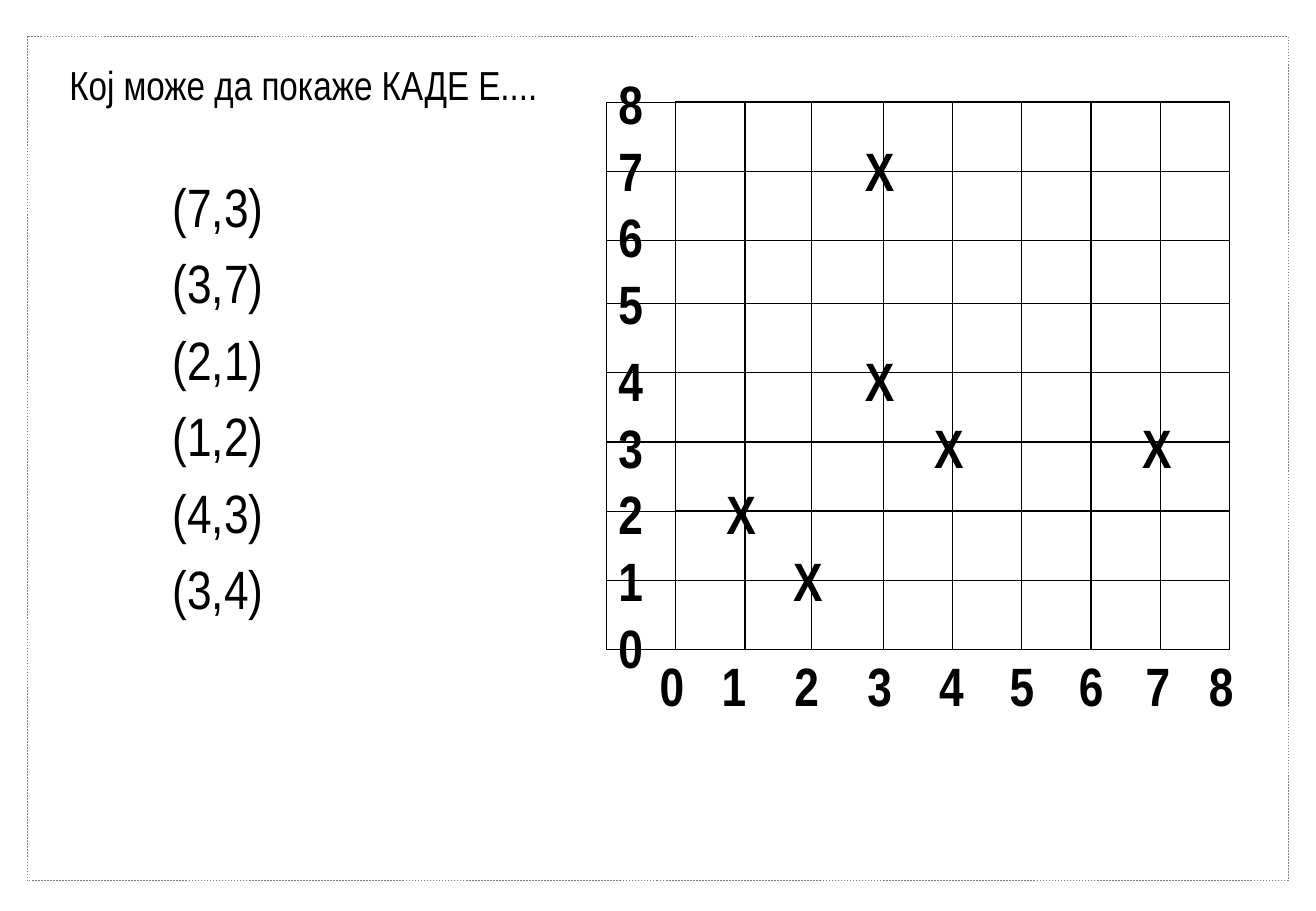
from lxml import etree
from pptx import Presentation
from pptx import util as u
from pptx.dml.color import RGBColor
from pptx.enum import dml, shapes, text
from pptx.oxml import ns

BLACK = RGBColor(0, 0, 0)
GRAY = RGBColor(0x80, 0x80, 0x80)
FONT = "Arial Narrow"

LEFT, TOP = 4.99, 0.84
COLS = [0.57, 0.57, 0.55, 0.59] + [0.57] * 5
ROWS = [0.57, 0.57, 0.52] + [0.57] * 5
TICKS = [5.33, 5.84, 6.44, 7.04, 7.63, 8.21, 8.78, 9.33, 9.85]
POINTS = [(7, 3), (3, 7), (2, 1), (1, 2), (4, 3), (3, 4)]


def place(shape, x, y, w, h):
    shape.left, shape.top = u.Inches(x), u.Inches(y)
    shape.width, shape.height = u.Inches(w), u.Inches(h)


def set_frame(frame):
    frame.word_wrap = True
    frame.auto_size = text.MSO_AUTO_SIZE.NONE
    frame.vertical_anchor = text.MSO_ANCHOR.TOP


def add_run(para, words, size, bold=False):
    para.alignment = text.PP_ALIGN.LEFT
    para.space_before = u.Pt(0)
    run = para.add_run()
    run.text = words
    font = run.font
    font.name, font.size, font.bold = FONT, u.Pt(size), bold
    font.color.rgb = BLACK


def add_label(slide, words, x, y, w=0.6):
    box = slide.shapes.add_textbox(u.Inches(x), u.Inches(y), u.Inches(w), u.Inches(0.63))
    set_frame(box.text_frame)
    add_run(box.text_frame.paragraphs[0], words, 32, True)


def add_border(slide):
    rect = slide.shapes.add_shape(
        shapes.MSO_SHAPE.RECTANGLE,
        u.Inches(0.22), u.Inches(0.3), u.Inches(10.38), u.Inches(6.95))
    rect.shadow.inherit = False
    rect.fill.background()
    rect.line.color.rgb = GRAY
    rect.line.width = u.Pt(0.25)
    rect.line.dash_style = dml.MSO_LINE.DASH


def add_title(slide):
    title = slide.shapes.title
    place(title, 0.47, 0.44, 4.2, 0.5)
    set_frame(title.text_frame)
    add_run(title.text_frame.paragraphs[0], "Кој може да покаже КАДЕ Е....", 24)


def add_list(slide):
    body = slide.placeholders[1]
    place(body, 1.32, 1.28, 1.62, 3.89)
    frame = body.text_frame
    set_frame(frame)
    for i, (x, y) in enumerate(POINTS):
        para = frame.add_paragraph() if i else frame.paragraphs[0]
        props = para._p.get_or_add_pPr()
        props.set("marL", "0")
        props.set("indent", "0")
        etree.SubElement(props, ns.qn("a:buNone"))
        para.line_spacing = u.Pt(45.36)
        add_run(para, f"({x},{y})", 32)


def set_edge(cell, side, width):
    line = etree.SubElement(cell._tc.get_or_add_tcPr(), ns.qn("a:ln" + side),
                            w=str(u.Pt(width)))
    fill = etree.SubElement(line, ns.qn("a:solidFill"))
    etree.SubElement(fill, ns.qn("a:srgbClr"), val=str(BLACK))


def add_grid(slide):
    table = slide.shapes.add_table(
        len(ROWS), len(COLS), u.Inches(LEFT), u.Inches(TOP),
        u.Inches(sum(COLS)), u.Inches(sum(ROWS))).table
    table.first_row = table.horz_banding = False
    for col, width in zip(table.columns, COLS):
        col.width = u.Inches(width)
    for row, height in zip(table.rows, ROWS):
        row.height = u.Inches(height)
    for r in range(len(ROWS)):
        for c in range(len(COLS)):
            cell = table.cell(r, c)
            # Thin lines around the axis column and on the right edge
            thin = ""
            if c == 0:
                thin = "LTB"
            elif c == len(COLS) - 1 and 0 < r < len(ROWS) - 1:
                thin = "R"
            for side in "LRTB":
                set_edge(cell, side, 0.75 if side in thin else 1)
            cell.fill.background()


def row_top(y):
    # The upper half of the scale sits slightly higher
    return 5.01 - 0.55 * y - (0.08 if y > 4 else 0)


def main():
    prs = Presentation()
    prs.slide_width, prs.slide_height = u.Inches(10.83), u.Inches(7.5)
    slide = prs.slides.add_slide(prs.slide_layouts[1])
    add_border(slide)

    # Question and coordinate pairs
    add_title(slide)
    add_list(slide)

    # Grid with both scales
    add_grid(slide)
    for n, x in enumerate(TICKS):
        add_label(slide, str(n), x, 5.32)
        add_label(slide, str(n), LEFT, row_top(n))

    # Marked points
    for x, y in POINTS:
        add_label(slide, "X", LEFT + sum(COLS[:x + 1]) - 0.25, row_top(y), 0.77)

    prs.save("out.pptx")


if __name__ == "__main__":
    main()
